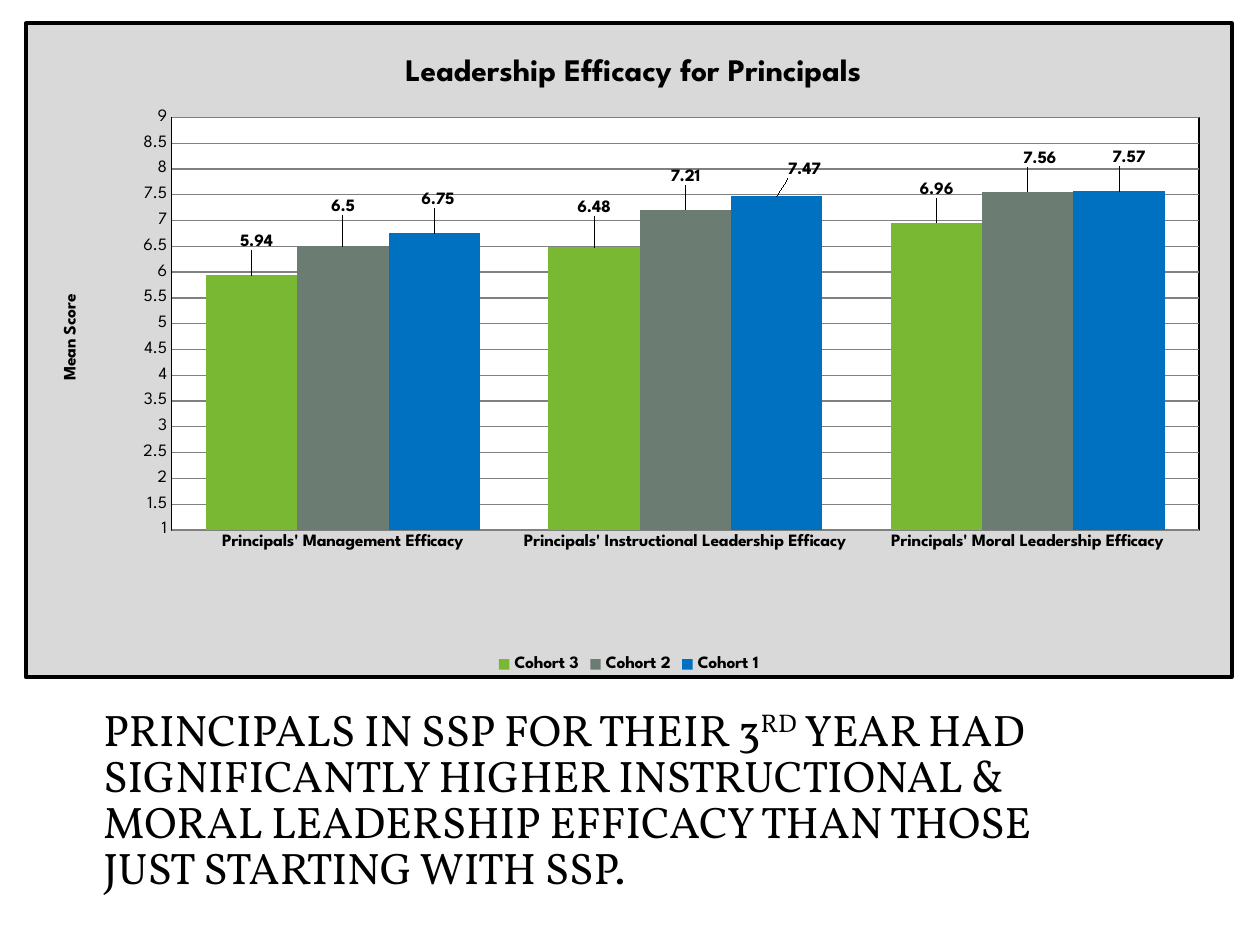
"""Build a slide with a clustered column chart of leadership efficacy."""
from typing import NamedTuple

from lxml.etree import SubElement
from pptx import Presentation
from pptx.chart.data import CategoryChartData as Data
from pptx.dml.color import RGBColor as Rgb
from pptx.enum.chart import XL_CHART_TYPE as Kind
from pptx.enum.chart import XL_LABEL_POSITION as Spot
from pptx.enum.chart import XL_LEGEND_POSITION as Side
from pptx.enum.chart import XL_TICK_MARK as Tick
from pptx.enum.text import MSO_ANCHOR as Anchor
from pptx.enum.text import MSO_AUTO_SIZE as Fit
from pptx.enum.text import PP_ALIGN as Align
from pptx.oxml import parse_xml
from pptx.oxml.ns import nsdecls, qn
from pptx.util import Inches, Pt

HUES = {"black": "000000", "white": "FFFFFF", "panel": "D9D9D9", "grid": "808080",
        "green": "78B832", "gray": "6B7C72", "blue": "0070C0"}
SANS, SERIF = "League Spartan", "Vollkorn"
GROUPS = ["Principals' Management Efficacy",
          "Principals' Instructional Leadership Efficacy",
          "Principals' Moral Leadership Efficacy"]


class Cohort(NamedTuple):
    """One series, with the shift of each value label as chart fractions."""
    name: str
    hue: str
    means: tuple
    shifts: tuple


COHORTS = [
    Cohort("Cohort 3", "green", (5.94, 6.48, 6.96),
           ((0.004, -0.03), (0, -0.04), (0, -0.03))),
    Cohort("Cohort 2", "gray", (6.5, 7.21, 7.56),
           ((0, -0.04), (0, -0.03), (0.01, -0.03))),
    Cohort("Cohort 1", "blue", (6.75, 7.47, 7.57),
           ((0.003, -0.03), (0.023, -0.02), (0.008, -0.03))),
]


def paint(fill, hue: str) -> None:
    """Give a fill one solid colour."""
    fill.solid()
    fill.fore_color.rgb = Rgb.from_string(HUES[hue])


def style(font, face: str, size: float, bold: bool = False) -> None:
    """Set black text in a face, size and weight."""
    font.name, font.size, font.bold = face, Pt(size), bold
    font.color.rgb = Rgb.from_string(HUES["black"])


def layout(**parts):
    """Return a manual chart layout made of the given parts."""
    root = parse_xml(f"<c:layout {nsdecls('c')}/>")
    frame = SubElement(root, qn("c:manualLayout"))
    for tag, val in parts.items():
        SubElement(frame, qn(f"c:{tag}")).set("val", str(val))
    return root


def outline(host, hue: str, width: float, line: str) -> None:
    """Add a fill and a line to a chart part, ahead of its text settings."""
    props = parse_xml(
        f"<c:spPr {nsdecls('c', 'a')}><a:solidFill><a:srgbClr val='{HUES[hue]}'/></a:solidFill>"
        f"<a:ln w='{Pt(width)}'><a:solidFill><a:srgbClr val='{HUES[line]}'/></a:solidFill>"
        "<a:round/></a:ln></c:spPr>")
    text = host.find(qn("c:txPr"))
    if text is None:
        host.append(props)
    else:
        text.addprevious(props)


def head(owner, text: str, size: float, x: float, y: float) -> None:
    """Write a bold title on a chart or axis and place it."""
    owner.has_title = True
    title = owner.axis_title if hasattr(owner, "axis_title") else owner.chart_title
    para = title.text_frame.paragraphs[0]
    para.text = text
    style(para.font, SANS, size, True)
    root = title._element
    for old in root.findall(qn("c:layout")):
        root.remove(old)
    root.find(qn("c:tx")).addnext(layout(xMode="edge", yMode="edge", x=x, y=y))


def bars(plot) -> None:
    """Colour each series and place its value labels."""
    plot.gap_width, plot.overlap, plot.vary_by_categories = 75, 0, False
    for series, cohort in zip(plot.series, COHORTS):
        paint(series.format.fill, cohort.hue)
        labels = series.data_labels
        labels.show_value = True
        style(labels.font, SANS, 10, True)
        for spot, (x, y) in enumerate(cohort.shifts):
            label = series.points[spot].data_label
            label.position = Spot.OUTSIDE_END
            style(label.font, SANS, 10, True)
        for node, (x, y) in zip(labels._element.findall(qn("c:dLbl")), cohort.shifts):
            node.find(qn("c:idx")).addnext(layout(x=x, y=y))


def axes(chart) -> None:
    """Format both axes and the gridlines."""
    cat, val = chart.category_axis, chart.value_axis
    for axis in (cat, val):
        axis.major_tick_mark = axis.minor_tick_mark = Tick.NONE
        style(axis.tick_labels.font, SANS, 10, axis is cat)
    val.minimum_scale, val.maximum_scale, val.major_unit = 1, 9, 0.5
    val.format.line.fill.background()
    for line in (cat.format.line, val.major_gridlines.format.line):
        paint(line.fill, "grid")
        line.width = Pt(0.75)
    head(val, "Mean Score", 10, 0.027, 0.41)


def draw_chart(slide) -> None:
    """Add the efficacy chart."""
    data = Data()
    data.categories = GROUPS
    for cohort in COHORTS:
        data.add_series(cohort.name, cohort.means)
    chart = slide.shapes.add_chart(Kind.COLUMN_CLUSTERED, Inches(0.19), Inches(0.17),
                                   Inches(9.6), Inches(5.22), data).chart
    style(chart.font, SANS, 10)
    head(chart, "Leadership Efficacy for Principals", 18, 0.31, 0.04)
    chart.has_legend = True
    chart.legend.position = Side.BOTTOM
    chart.legend.include_in_layout = False
    style(chart.legend.font, SANS, 10, True)
    axes(chart)
    bars(chart.plots[0])
    space = chart._chartSpace
    area = space.find(f".//{qn('c:plotArea')}")
    for old in area.findall(qn("c:layout")):
        area.remove(old)
    area.insert(0, layout(layoutTarget="inner", xMode="edge", yMode="edge",
                          x=0.121, y=0.144, w=0.852, h=0.631))
    outline(area, "white", 0.75, "black")
    outline(space, "panel", 2.25, "black")


def draw_title(slide) -> None:
    """Place the finding in the title below the chart."""
    title = slide.shapes.title
    title.left, title.top = Inches(0.72), Inches(5.65)
    title.width, title.height = Inches(8.33), Inches(1.42)
    frame = title.text_frame
    frame.word_wrap, frame.auto_size = True, Fit.NONE
    frame.vertical_anchor = Anchor.MIDDLE
    para = frame.paragraphs[0]
    para.alignment, para.line_spacing = Align.LEFT, 0.87
    style(para.font, SERIF, 25.2)
    for text in ("PRINCIPALS IN SSP FOR THEIR 3", "RD",
                 " YEAR HAD SIGNIFICANTLY HIGHER INSTRUCTIONAL & MORAL LEADERSHIP "
                 "EFFICACY THAN THOSE JUST STARTING WITH SSP."):
        run = para.add_run()
        run.text = text
        if text == "RD":
            run.font._element.set("baseline", "30000")


def main() -> None:
    """Build and save the deck."""
    deck = Presentation()
    deck.slide_width, deck.slide_height = Inches(10), Inches(7.5)
    slide = deck.slides.add_slide(deck.slide_layouts[5])
    draw_title(slide)
    draw_chart(slide)
    deck.save("out.pptx")


if __name__ == "__main__":
    main()
